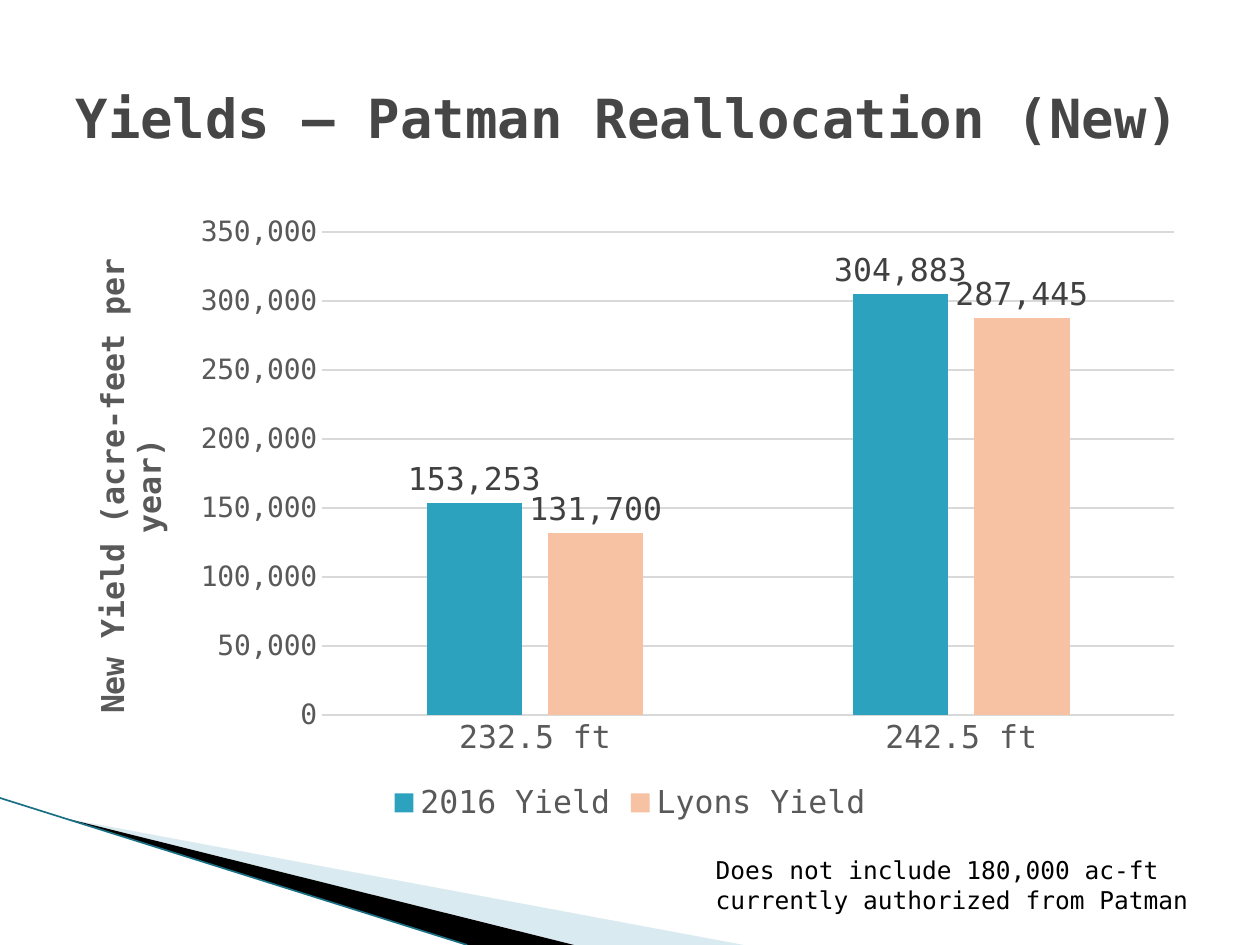
import lxml.etree
import pptx
import pptx.chart.data
import pptx.dml.color
import pptx.enum.chart
import pptx.enum.shapes
import pptx.enum.text
import pptx.oxml.ns
import pptx.util

Pt = pptx.util.Pt
FACE = "DejaVu Sans Mono"
GREY = "595959"
GRID = "D9D9D9"
qn = pptx.oxml.ns.qn


def rgb(code):
    return pptx.dml.color.RGBColor.from_string(code)


def add_element(parent, tag, **attributes):
    return lxml.etree.SubElement(parent, qn(tag), attributes)


def style_font(font, size, color, bold=False):
    font.name = FACE
    font.size = Pt(size)
    font.bold = bold
    font.color.rgb = rgb(color)


def write(frame, text, size, color="000000", bold=False, anchor="TOP"):
    frame.word_wrap = True
    frame.auto_size = pptx.enum.text.MSO_AUTO_SIZE.NONE
    frame.vertical_anchor = getattr(pptx.enum.text.MSO_ANCHOR, anchor)
    paragraph = frame.paragraphs[0]
    paragraph.alignment = pptx.enum.text.PP_ALIGN.LEFT
    run = paragraph.add_run()
    run.text = text
    style_font(run.font, size, color, bold)


def place(shape, left, top, width, height):
    shape.left, shape.top = Pt(left), Pt(top)
    shape.width, shape.height = Pt(width), Pt(height)


def add_wedge(slide, points, color, opacity=100):
    builder = slide.shapes.build_freeform(*points[0], scale=float(Pt(1)))
    builder.add_line_segments(points[1:], close=True)
    wedge = builder.convert_to_shape()
    wedge.shadow.inherit = False
    wedge.fill.solid()
    wedge.fill.fore_color.rgb = rgb(color)
    wedge.line.fill.background()
    if opacity < 100:
        tint = wedge._element.spPr.find(".//" + qn("a:srgbClr"))
        add_element(tint, "a:alpha", val=str(opacity * 1000))


def add_corner(slide, left, top, width, height):
    bottom = top + height
    tip_x, tip_y = left + 39, top + 12
    add_wedge(slide, [(tip_x, tip_y), (left + width, bottom), (left + 328, bottom)], "A0CBDC", 40)
    add_wedge(slide, [(tip_x, tip_y), (left + 328, bottom), (left + 267, bottom)], "000000")
    edge = slide.shapes.add_connector(
        pptx.enum.shapes.MSO_CONNECTOR.STRAIGHT,
        Pt(left), Pt(top), Pt(left + 267), Pt(bottom))
    edge.line.color.rgb = rgb("1A6F84")
    edge.line.width = Pt(0.95)
    add_element(edge._element.spPr, "a:effectLst")


def fix_plot_area(chart, **fractions):
    plot_area = chart._chartSpace.chart.plotArea
    layout = plot_area.find(qn("c:layout"))
    if layout is None:
        layout = lxml.etree.Element(qn("c:layout"))
        plot_area.insert(0, layout)
    manual = add_element(layout, "c:manualLayout")
    settings = {"layoutTarget": "inner", "xMode": "edge", "yMode": "edge", **fractions}
    for tag, value in settings.items():
        add_element(manual, "c:" + tag, val=str(value))


def style_axes(chart):
    tick_none = pptx.enum.chart.XL_TICK_MARK.NONE
    heights, yields = chart.category_axis, chart.value_axis
    for axis, size in ((heights, 18), (yields, 16)):
        axis.major_tick_mark = axis.minor_tick_mark = tick_none
        style_font(axis.tick_labels.font, size, GREY)
    yields.minimum_scale, yields.maximum_scale, yields.major_unit = 0, 350000, 50000
    yields.tick_labels.number_format = "#,##0"
    yields.tick_labels.number_format_is_linked = False
    yields.has_major_gridlines = True
    for line in (heights.format.line, yields.major_gridlines.format.line):
        line.color.rgb = rgb(GRID)
        line.width = Pt(0.75)
    yields.format.line.fill.background()
    yields.has_title = True
    run = yields.axis_title.text_frame.paragraphs[0].add_run()
    run.text = "New Yield (acre-feet per year)"
    style_font(run.font, 18, GREY, bold=True)


def add_yield_chart(slide, left, top, width, height):
    data = pptx.chart.data.CategoryChartData(number_format="#,##0")
    data.categories = ["232.5 ft", "242.5 ft"]
    data.add_series("2016 Yield", (153253, 304883))
    data.add_series("Lyons Yield", (131700, 287445))
    chart = slide.shapes.add_chart(
        pptx.enum.chart.XL_CHART_TYPE.COLUMN_CLUSTERED,
        Pt(left), Pt(top), Pt(width), Pt(height), data).chart
    style_font(chart.font, 10, "000000")
    chart.has_title = False
    chart.has_legend = True
    chart.legend.position = pptx.enum.chart.XL_LEGEND_POSITION.BOTTOM
    chart.legend.include_in_layout = False
    style_font(chart.legend.font, 18, GREY)
    style_axes(chart)
    plot = chart.plots[0]
    plot.vary_by_categories = False
    plot.gap_width, plot.overlap = 219, -27
    for series, color in zip(plot.series, ("2DA2BF", "F7C1A4")):
        series.format.fill.solid()
        series.format.fill.fore_color.rgb = rgb(color)
        labels = series.data_labels
        labels.show_value = True
        labels.number_format = "#,##0"
        labels.number_format_is_linked = False
        labels.position = pptx.enum.chart.XL_LABEL_POSITION.OUTSIDE_END
        style_font(labels.font, 18, "404040")
    fix_plot_area(chart, x=148 / width, y=16 / height, w=487 / width, h=276 / height)


def add_title(slide, left, top, width, height):
    title = slide.shapes.title
    place(title, left, top, width, height)
    write(title.text_frame, "Yields – Patman Reallocation (New)", 30.8,
          color="464646", bold=True, anchor="MIDDLE")


def add_note(slide, left, top, width, height):
    note = slide.shapes.add_textbox(Pt(left), Pt(top), Pt(width), Pt(height))
    write(note.text_frame, "Does not include 180,000 ac-ft currently authorized from Patman", 14)


def main():
    deck = pptx.Presentation()
    deck.slide_width, deck.slide_height = Pt(720), Pt(540)
    slide = deck.slides.add_slide(deck.slide_layouts[5])
    add_corner(slide, 0, 456, 425, 84)
    add_title(slide, 36, 21.6, 648, 90)
    add_yield_chart(slide, 36, 116.6, 648, 356.4)
    add_note(slide, 401.8, 485.3, 295.2, 41)
    deck.save("out.pptx")


if __name__ == "__main__":
    main()
